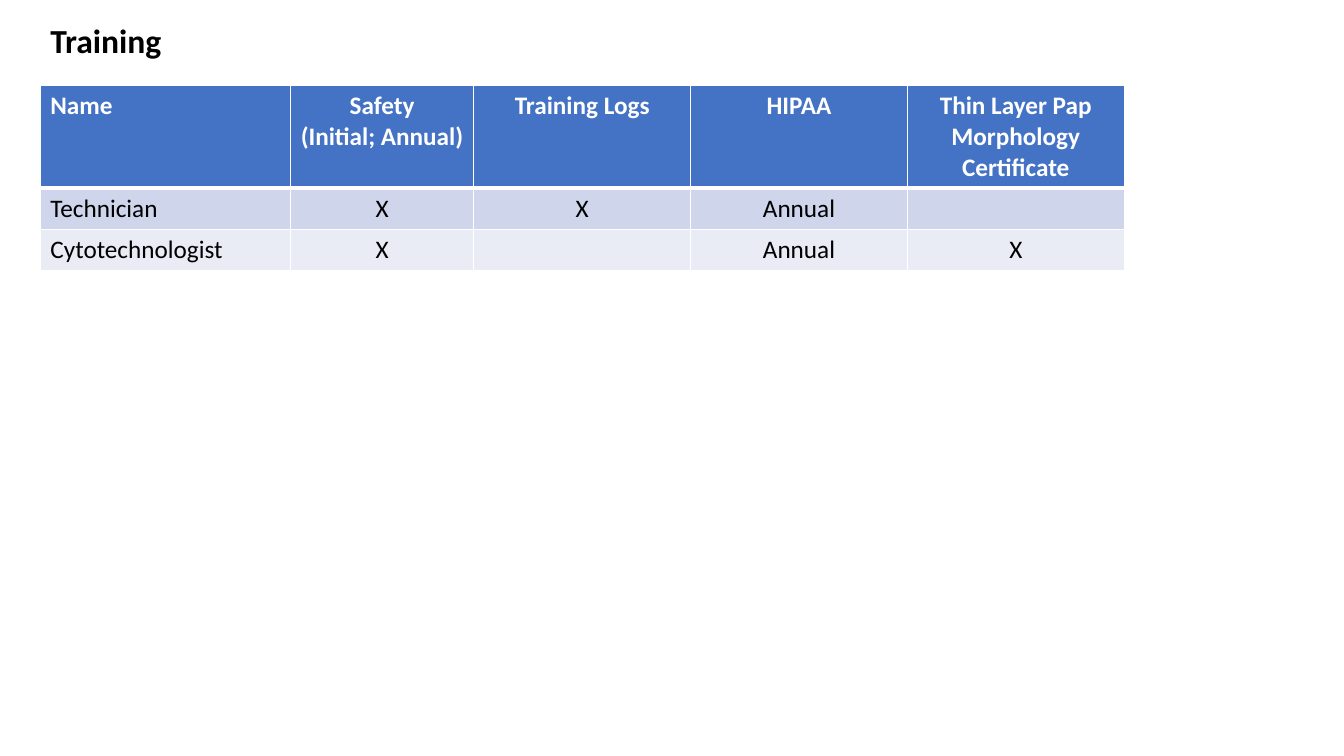
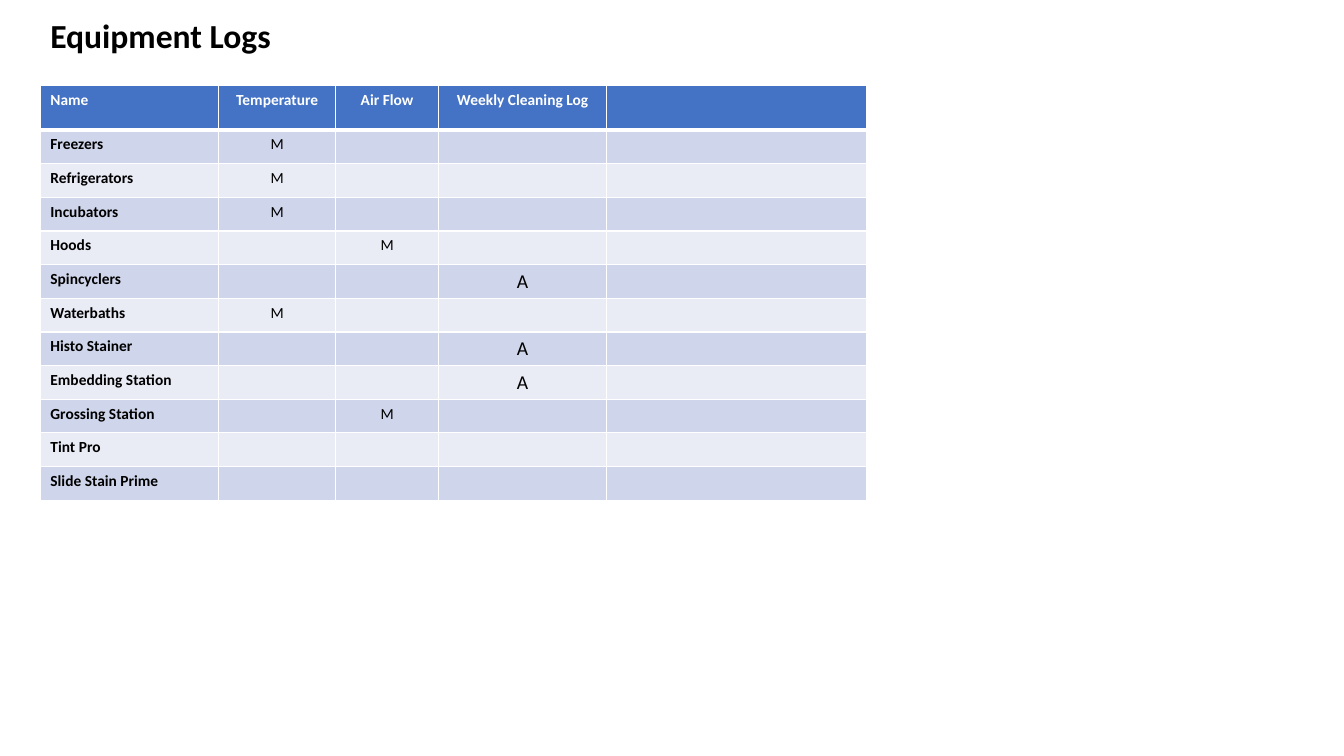
from lxml import etree
from pptx import Presentation
from pptx.dml.color import RGBColor
from pptx.enum.text import MSO_AUTO_SIZE, PP_ALIGN
from pptx.oxml.ns import qn
from pptx.util import Emu, Pt

PX = 9144  # EMU per px, 100 px to the inch
LEFT, TABLE_TOP = 40, 85
FONT = "Calibri"
TITLE_SIZE = 24
BLACK = RGBColor(0x00, 0x00, 0x00)
WHITE = RGBColor(0xFF, 0xFF, 0xFF)
HEADER_BLUE = RGBColor(0x44, 0x72, 0xC4)
BANDS = (RGBColor(0xCF, 0xD5, 0xEA), RGBColor(0xE9, 0xEB, 0xF5))
ALIGN_LEFT, ALIGN_CENTER = PP_ALIGN.LEFT, PP_ALIGN.CENTER
FIT_TEXT = MSO_AUTO_SIZE.SHAPE_TO_FIT_TEXT

TRAINING = [
    ["Name", "Safety\n(Initial; Annual)", "Training Logs", "HIPAA",
     "Thin Layer Pap Morphology Certificate"],
    ["Technician", "X", "X", "Annual", ""],
    ["Cytotechnologist", "X", "", "Annual", "X"],
]
EQUIPMENT = [
    ["Name", "Temperature", "Air Flow", "Weekly Cleaning Log", ""],
    ["Freezers", "M", "", "", ""],
    ["Refrigerators", "M", "", "", ""],
    ["Incubators", "M", "", "", ""],
    ["Hoods", "", "M", "", ""],
    ["Spincyclers", "", "", "A", ""],
    ["Waterbaths", "M", "", "", ""],
    ["Histo Stainer", "", "", "A", ""],
    ["Embedding Station", "", "", "A", ""],
    ["Grossing Station", "", "M", "", ""],
    ["Tint Pro", "", "", "", ""],
    ["Slide Stain Prime", "", "", "", ""],
]


def px(length):
    return Emu(length * PX)


class Deck:
    """Holds the shared style and the slide being built."""

    def __init__(self):
        self.prs = Presentation()
        self.prs.slide_width, self.prs.slide_height = px(1333), px(750)
        self.slide = None

    def new_slide(self):
        self.slide = self.prs.slides.add_slide(self.prs.slide_layouts[6])

    def run(self, paragraph, text, size, color, bold):
        run = paragraph.add_run()
        run.text = text
        run.font.name = FONT
        run.font.size = Pt(size)
        run.font.bold = bold
        run.font.color.rgb = color

    def title(self, text, top, width):
        box = self.slide.shapes.add_textbox(px(LEFT), px(top), px(width), px(50))
        frame = box.text_frame
        frame.word_wrap = False
        frame.auto_size = FIT_TEXT
        self.run(frame.paragraphs[0], text, TITLE_SIZE, BLACK, True)

    def borders(self, cell, top, bottom):
        """Draw white cell borders; top and bottom are widths in points."""
        properties = cell._tc.get_or_add_tcPr()
        for side, width in (("L", 1), ("R", 1), ("T", top), ("B", bottom)):
            line = etree.SubElement(properties, qn(f"a:ln{side}"), w=str(Pt(width)))
            fill = etree.SubElement(line, qn("a:solidFill"))
            etree.SubElement(fill, qn("a:srgbClr"), val=str(WHITE))

    def cell_text(self, cell, text, align, size, color, bold, empty_size):
        frame = cell.text_frame
        for index, line in enumerate(text.split("\n")):
            paragraph = frame.add_paragraph() if index else frame.paragraphs[0]
            paragraph.alignment = align
            if line:
                self.run(paragraph, line, size, color, bold)
            else:
                etree.SubElement(paragraph._p, qn("a:endParaRPr"),
                                 sz=str(empty_size * 100))

    def table(self, rows, widths, heights, size, empty_size,
              bold_names=False, mark_sizes=None):
        """Banded table; mark_sizes gives certain cell texts their own size."""
        mark_sizes = mark_sizes or {}
        table = self.slide.shapes.add_table(
            len(rows), len(widths), px(LEFT), px(TABLE_TOP),
            px(sum(widths)), px(sum(heights))).table
        for column, width in zip(table.columns, widths):
            column.width = px(width)
        for r, (texts, height) in enumerate(zip(rows, heights)):
            table.rows[r].height = px(height)
            header = r == 0
            for c, text in enumerate(texts):
                cell = table.cell(r, c)
                self.borders(cell, 3 if r == 1 else 1, 3 if header else 1)
                cell.fill.solid()
                cell.fill.fore_color.rgb = HEADER_BLUE if header else BANDS[(r - 1) % 2]
                self.cell_text(
                    cell, text, ALIGN_CENTER if c else ALIGN_LEFT,
                    mark_sizes.get(text, size), WHITE if header else BLACK,
                    header or (bold_names and c == 0), empty_size)


def main():
    deck = Deck()

    deck.new_slide()
    deck.table(TRAINING, [248, 182, 215, 215, 215], [100, 41, 41],
               size=18, empty_size=18)
    deck.title("Training", top=15, width=132)

    deck.new_slide()
    deck.table(EQUIPMENT, [177, 116, 102, 167, 258],
               [44] + [32] * (len(EQUIPMENT) - 1), size=11, empty_size=14,
               bold_names=True, mark_sizes={"A": 14})
    deck.title("Equipment Logs", top=10, width=242)

    deck.prs.save("out.pptx")


if __name__ == "__main__":
    main()
